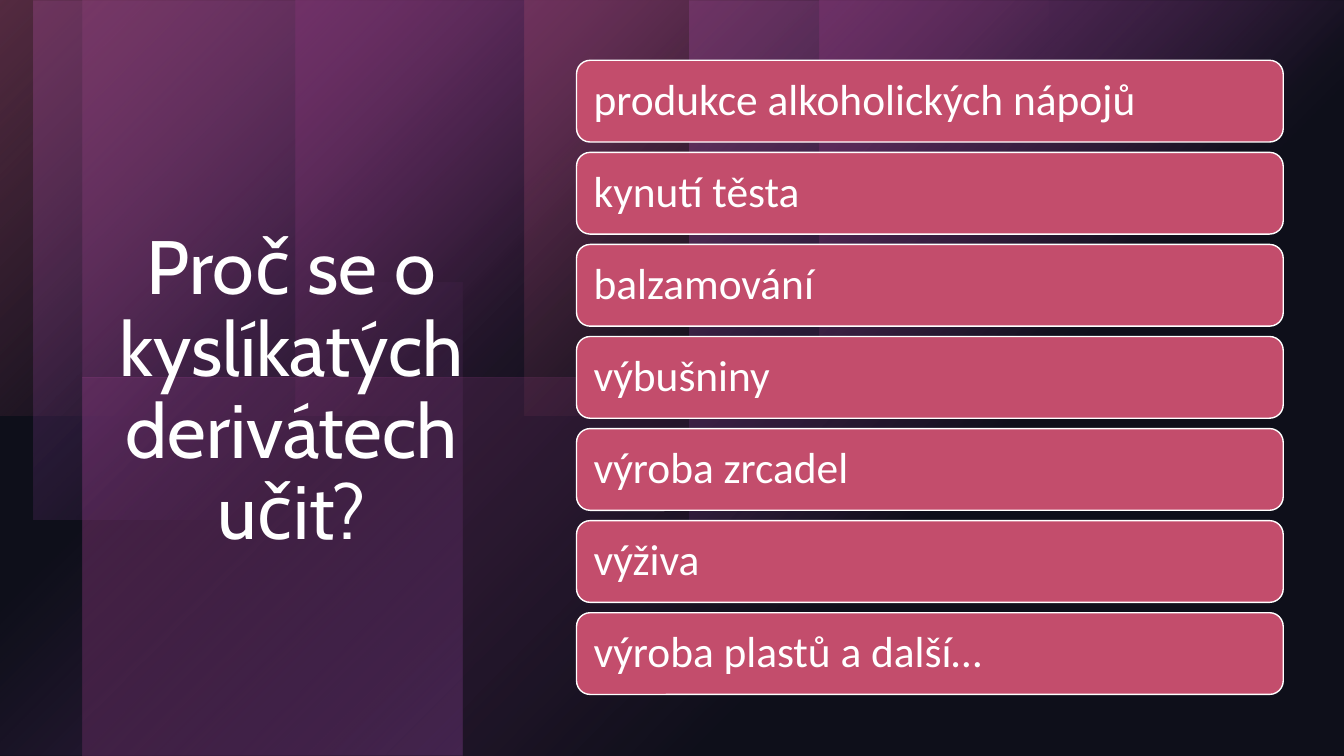
import pptx
import pptx.util
import pptx.dml.color
import pptx.enum.shapes
import pptx.enum.text
import pptx.oxml
import pptx.oxml.ns
from pptx.util import Cm

SLIDE_WIDTH, SLIDE_HEIGHT = 33.87, 19.05
PURPLE, MAGENTA, PINK = "B84DC3", "B13B8C", "C34D6C"
WHITE, BLACK, NAVY = "FFFFFF", "000000", "242641"

TOP_LEFT = {"l": 0, "t": 0, "r": 100, "b": 100}
BOTTOM_RIGHT = {"l": 100, "t": 100, "r": 0, "b": 0}
CORNER_FADE = [(0, 40), (34, 20), (65, 0)]
WIDE_FADE = [(0, 60), (60, 0)]
TALL_FADE = [(0, 60), (63, 0)]

# left, top, width, height, rotation, flips, colour, fade stops, bright corner
GLOWS = [
    (0, 7.11, 11.66, 11.94, 0, "H", PURPLE, CORNER_FADE, BOTTOM_RIGHT),
    (13.21, -11.15, 9.53, 31.8, 90, "H", MAGENTA, WIDE_FADE, TOP_LEFT),
    (13.21, -1.63, 9.53, 31.8, 90, "", MAGENTA, WIDE_FADE, TOP_LEFT),
    (19.08, -1.7, 13.08, 16.51, 270, "H", PURPLE, TALL_FADE, TOP_LEFT),
    (2.57, -1.7, 13.08, 16.51, 270, "HV", PURPLE, TALL_FADE, TOP_LEFT),
    (0, 0, 13.21, 10.46, 0, "H", PINK, WIDE_FADE, TOP_LEFT),
    (13.21, 0, 13.21, 10.46, 0, "", PINK, WIDE_FADE, TOP_LEFT),
    (7.44, 0, 13.21, 10.46, 0, "H", MAGENTA, WIDE_FADE, TOP_LEFT),
    (20.65, 0, 13.21, 10.46, 0, "", MAGENTA, WIDE_FADE, TOP_LEFT),
]

TITLE = "Proč se o kyslíkatých derivátech učit?"
REASONS = [
    "produkce alkoholických nápojů",
    "kynutí těsta",
    "balzamování",
    "výbušniny",
    "výroba zrcadel",
    "výživa",
    "výroba plastů a další…",
]
BAR_TOP, BAR_PITCH = 1.52, 2.32


def color(value):
    return pptx.dml.color.RGBColor.from_string(value)


def set_values(target, values):
    for name, value in values.items():
        setattr(target, name, value)


def add_block(slide, kind, left, top, width, height):
    shape = slide.shapes.add_shape(kind, Cm(left), Cm(top), Cm(width), Cm(height))
    shape.shadow.inherit = False
    return shape


def set_fade(shape, value, stops, corner):
    """Fill the shape with one colour that fades out from a corner."""
    stop_xml = "".join(
        f'<a:gs pos="{position * 1000}"><a:srgbClr val="{value}">'
        f'<a:alpha val="{opacity * 1000}"/></a:srgbClr></a:gs>'
        for position, opacity in stops
    )
    sides = " ".join(f'{side}="{share * 1000}"' for side, share in corner.items())
    gradient = pptx.oxml.parse_xml(
        f'<a:gradFill {pptx.oxml.ns.nsdecls("a")} rotWithShape="1">'
        f"<a:gsLst>{stop_xml}</a:gsLst>"
        f'<a:path path="circle"><a:fillToRect {sides}/></a:path></a:gradFill>'
    )
    properties = shape.element.spPr
    properties.find(pptx.oxml.ns.qn("a:prstGeom")).addnext(gradient)


def add_glow(slide, left, top, width, height, rotation, flips, value, stops, corner):
    shape = add_block(
        slide, pptx.enum.shapes.MSO_SHAPE.RECTANGLE, left, top, width, height
    )
    shape.rotation = rotation
    for axis in flips:
        shape.element.spPr.xfrm.set(f"flip{axis}", "1")
    shape.line.fill.background()
    set_fade(shape, value, stops, corner)


def add_veil(slide):
    """Cover the whole slide with translucent navy."""
    shape = add_block(
        slide, pptx.enum.shapes.MSO_SHAPE.RECTANGLE, 0, 0, SLIDE_WIDTH, SLIDE_HEIGHT
    )
    shape.line.fill.background()
    shape.fill.solid()
    shape.fill.fore_color.rgb = color(NAVY)
    fill_color = shape.element.spPr.find(".//" + pptx.oxml.ns.qn("a:srgbClr"))
    alpha = fill_color.makeelement(pptx.oxml.ns.qn("a:alpha"), {"val": "40000"})
    fill_color.append(alpha)


def write_text(shape, text, font, size, alignment, anchor):
    frame = shape.text_frame
    set_values(frame, {"word_wrap": True, "vertical_anchor": anchor})
    paragraph = frame.paragraphs[0]
    set_values(paragraph, {"text": text, "alignment": alignment, "line_spacing": 0.9})
    run_font = paragraph.runs[0].font
    set_values(run_font, {"name": font, "size": pptx.util.Pt(size)})
    run_font.color.rgb = color(WHITE)


def add_title(slide):
    box = slide.shapes.add_textbox(Cm(1.09), Cm(5.66), Cm(12.52), Cm(7.7))
    write_text(box, TITLE, "Cabin", 54, pptx.enum.text.PP_ALIGN.CENTER,
               pptx.enum.text.MSO_ANCHOR.TOP)


def add_reason(slide, top, text):
    bar = add_block(
        slide, pptx.enum.shapes.MSO_SHAPE.ROUNDED_RECTANGLE, 14.53, top, 17.81, 2.06
    )
    bar.fill.solid()
    bar.fill.fore_color.rgb = color(PINK)
    bar.line.color.rgb = color(WHITE)
    bar.line.width = pptx.util.Pt(1)
    sides = ("left", "top", "right", "bottom")
    set_values(bar.text_frame, {f"margin_{side}": Cm(0.33) for side in sides})
    write_text(bar, text, "Calibri", 31, pptx.enum.text.PP_ALIGN.LEFT,
               pptx.enum.text.MSO_ANCHOR.MIDDLE)


def main():
    presentation = pptx.Presentation()
    set_values(presentation, {"slide_width": Cm(SLIDE_WIDTH),
                              "slide_height": Cm(SLIDE_HEIGHT)})
    slide = presentation.slides.add_slide(presentation.slide_layouts[6])
    slide.background.fill.solid()
    slide.background.fill.fore_color.rgb = color(BLACK)
    for glow in GLOWS:
        add_glow(slide, *glow)
    add_veil(slide)
    add_title(slide)
    for index, reason in enumerate(REASONS):
        add_reason(slide, BAR_TOP + index * BAR_PITCH, reason)
    presentation.save("out.pptx")


if __name__ == "__main__":
    main()
